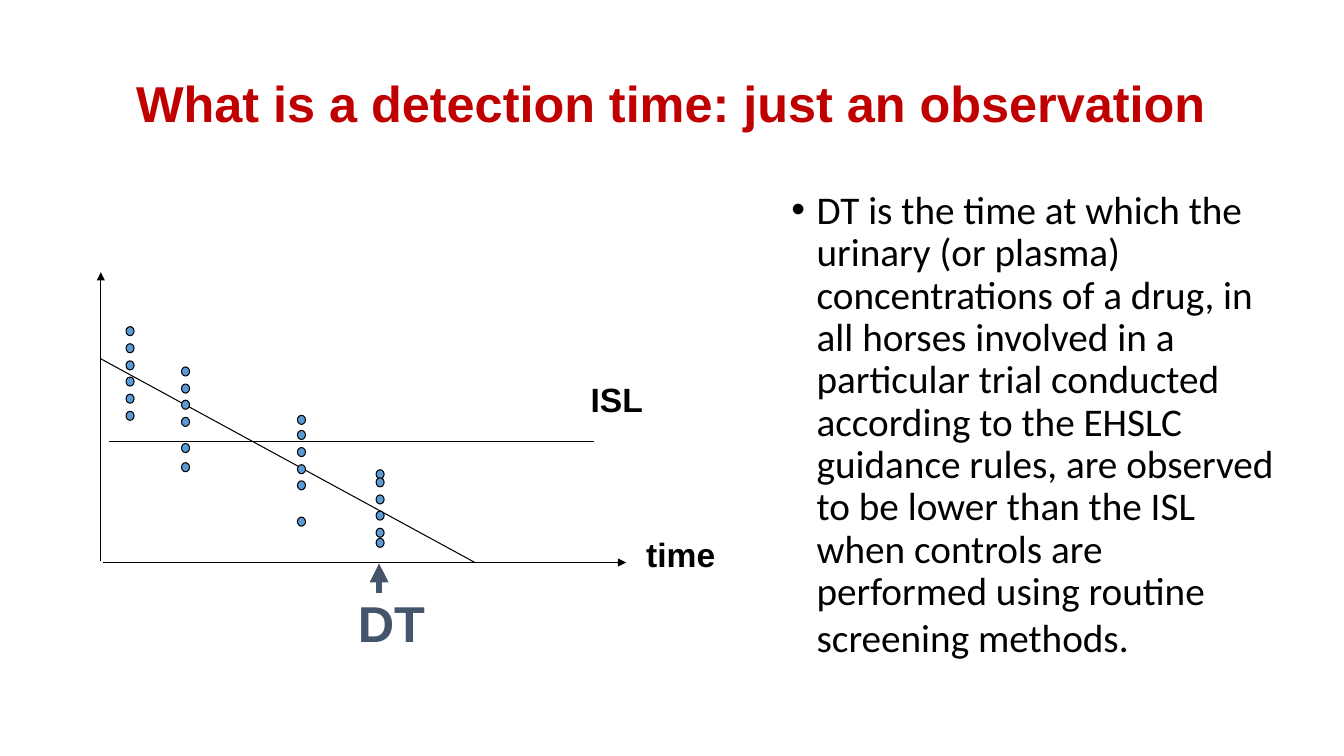
import pptx
import pptx.util
import pptx.dml.color
import pptx.enum.shapes
import pptx.enum.text
import pptx.oxml
import pptx.oxml.ns
from dataclasses import dataclass

PX = 9144  # EMU per px, 100 px to the inch
RGB = pptx.dml.color.RGBColor.from_string
Pt = pptx.util.Pt
MSO = pptx.enum.shapes.MSO_SHAPE
ANCHOR = pptx.enum.text.MSO_ANCHOR
AUTO = pptx.enum.text.MSO_AUTO_SIZE
ALIGN = pptx.enum.text.PP_ALIGN


@dataclass(frozen=True)
class Theme:
    title: str = "C00000"
    ink: str = "000000"
    dot: str = "5B9BD5"
    accent: str = "44546A"
    head_font: str = "Arial"
    body_font: str = "Calibri"
    title_pt: int = 36
    body_pt: int = 28
    body_end_pt: int = 32
    label_pt: int = 24
    line_pt: float = 0.75
    arrow_pt: float = 4.5


def px(*lengths):
    return [n * PX for n in lengths]


def apply(obj, **values):
    for name, value in values.items():
        setattr(obj, name, value)


def add_xml(parent, tag, **attrs):
    el = pptx.oxml.parse_xml(f"<a:{tag} {pptx.oxml.ns.nsdecls('a')}/>")
    for name, value in attrs.items():
        el.set(name, str(value))
    parent.append(el)


class Slide:
    def __init__(self, prs, theme):
        self.theme = theme
        self.slide = prs.slides.add_slide(prs.slide_layouts[1])
        self.chart = self.slide.shapes.add_group_shape().shapes

    def run(self, p, text, font, size, color, bold=False):
        r = p.add_run()
        r.text = text
        apply(r.font, name=font, size=Pt(size), bold=bold)
        r.font.color.rgb = RGB(color)

    def place(self, sp, box, **frame):
        """Set the box and text frame of a placeholder; return its paragraph."""
        apply(sp, **dict(zip(("left", "top", "width", "height"), px(*box))))
        apply(sp.text_frame, word_wrap=True, **frame)
        p = sp.text_frame.paragraphs[0]
        apply(p, alignment=ALIGN.LEFT, line_spacing=0.9, space_before=Pt(0))
        return p

    def title(self, text, box):
        t = self.theme
        p = self.place(self.slide.shapes.title, box,
                       vertical_anchor=ANCHOR.MIDDLE, auto_size=AUTO.NONE)
        self.run(p, text, t.head_font, t.title_pt, t.title, True)

    def bullet(self, text, box, margin, hanging):
        t = self.theme
        p = self.place(self.slide.placeholders[1], box,
                       vertical_anchor=ANCHOR.TOP,
                       auto_size=AUTO.SHAPE_TO_FIT_TEXT)
        pPr = p._p.get_or_add_pPr()
        for name, n in {"marL": margin, "indent": -hanging}.items():
            pPr.set(name, str(n * PX))
        add_xml(pPr, "buFont", typeface=t.head_font)
        add_xml(pPr, "buChar", char="•")
        self.run(p, text, t.body_font, t.body_pt, t.ink)
        self.run(p, " ", t.body_font, t.body_end_pt, t.ink)

    def label(self, text, box, size, color):
        sp = self.chart.add_textbox(*px(*box))
        apply(sp.text_frame, word_wrap=False,
              auto_size=AUTO.SHAPE_TO_FIT_TEXT)
        self.run(sp.text_frame.paragraphs[0], text, self.theme.head_font,
                 size, color, True)

    def line(self, ends, color, width, arrow=False):
        c = self.chart.add_connector(
            pptx.enum.shapes.MSO_CONNECTOR.STRAIGHT, *px(*ends))
        c.line.color.rgb = RGB(color)
        c.line.width = Pt(width)
        if arrow:
            add_xml(c.line._get_or_add_ln(), "tailEnd", type="triangle")
        add_xml(c._element.spPr, "effectLst")

    def dot(self, x, y):
        sp = self.chart.add_shape(MSO.OVAL, *px(x, y, 8, 9))
        sp.shadow.inherit = False
        sp.fill.solid()
        sp.fill.fore_color.rgb = RGB(self.theme.dot)
        sp.line.color.rgb = RGB(self.theme.ink)
        sp.line.width = Pt(self.theme.line_pt)


# Left edge of each sampling time: top edges of its observations
OBSERVATIONS = {
    125: (324, 341, 358, 374, 391, 408),
    180: (364, 381, 397, 414, 440, 459),
    295: (412, 427, 444, 461, 477, 513),
    373: (466, 474, 491, 507, 524, 534),
}
AXES = ((100, 557, 100, 270), (102, 558, 621, 558))
ISL_LINE = (108, 438, 589, 438)
DECAY_LINE = (100, 356, 471, 558)


def main():
    prs = pptx.Presentation()
    apply(prs, slide_width=1333 * PX, slide_height=750 * PX)
    t = Theme()
    s = Slide(prs, t)
    s.title("What is a detection time: just an observation",
            (125, 61, 1088, 89))
    s.bullet("DT is the time at which the urinary (or plasma) concentrations "
             "of a drug, in all horses involved in a particular trial "
             "conducted according to the EHSLC guidance rules, are observed "
             "to be lower than the ISL when controls are performed using "
             "routine screening methods.",
             (450, 184, 826, 483), margin=350, hanging=25)

    for axis in AXES:
        s.line(axis, t.ink, t.line_pt, arrow=True)
    for ends in (ISL_LINE, DECAY_LINE):
        s.line(ends, t.ink, t.line_pt)
    for x, tops in OBSERVATIONS.items():
        for y in tops:
            s.dot(x, y)

    s.label("ISL", (576, 371, 72, 50), t.label_pt, t.ink)
    s.label("time", (631, 525, 91, 50), t.label_pt, t.ink)
    s.label("DT", (345, 582, 88, 71), t.title_pt, t.accent)
    s.line((376, 588, 376, 559), t.accent, t.arrow_pt, arrow=True)
    prs.save("out.pptx")


if __name__ == "__main__":
    main()
